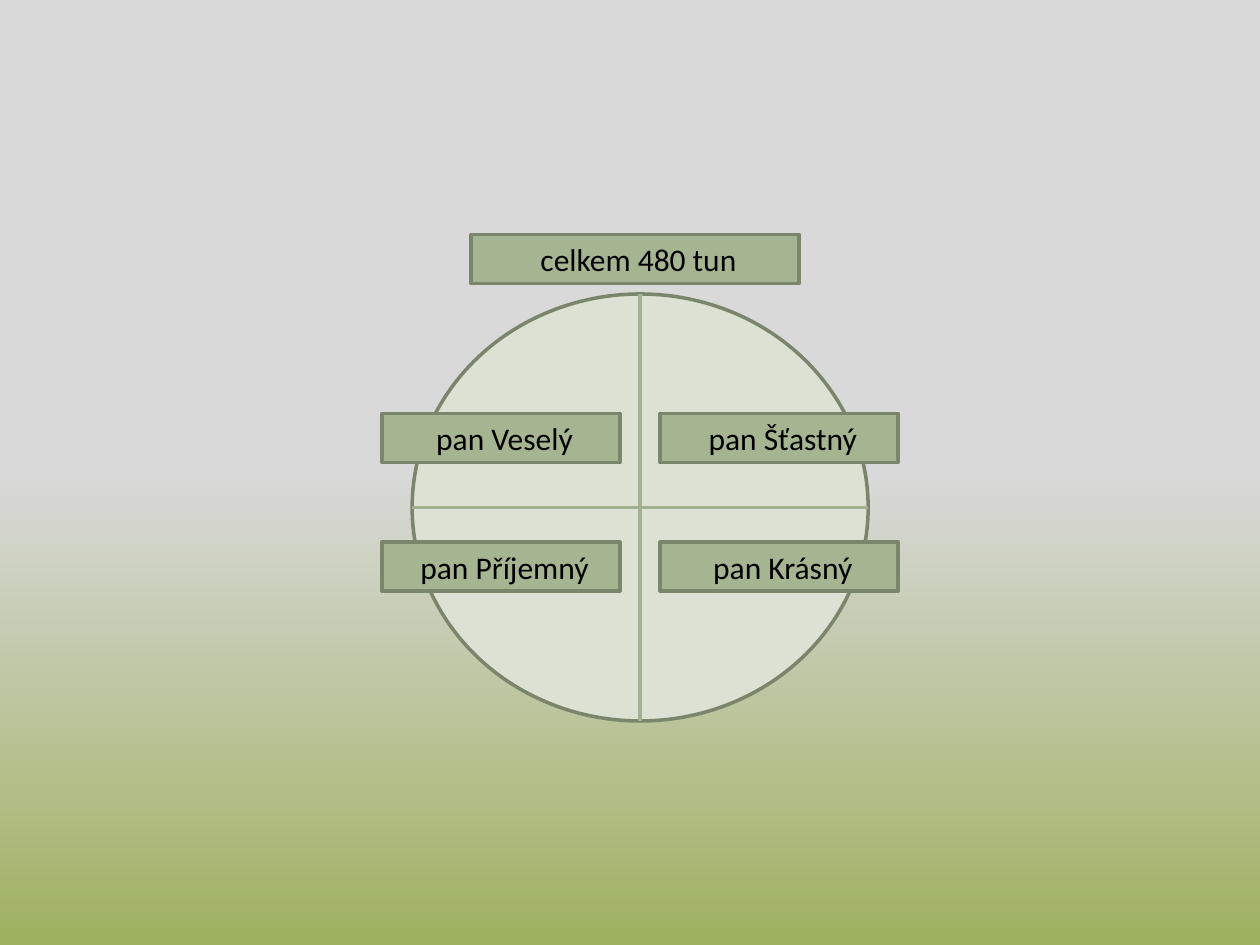
from dataclasses import dataclass

from pptx import Presentation
from pptx.dml.color import RGBColor
from pptx.enum import shapes as es, text as et
from pptx.oxml import ns, xmlchemy as xc
from pptx.util import Pt

BLACK = RGBColor(0x00, 0x00, 0x00)
GREY = RGBColor(0xD9, 0xD9, 0xD9)
OLIVE = RGBColor(0x9E, 0xB1, 0x60)
PALE = RGBColor(0xDB, 0xE1, 0xD3)
SAGE = RGBColor(0xA5, 0xB5, 0x92)
EDGE = RGBColor(0x7A, 0x86, 0x6C)
DIVIDER = RGBColor(0xA1, 0xB2, 0x8E)

CX, CY = 365.8, 290.0
PIE_W, PIE_H = 260.6, 244.0
LABEL_W, LABEL_H = 136.0, 28.1
COL_GAP = 23.0
ROW_TOPS = (236.2, 309.6)
NAMES = ((" pan Veselý", " pan Šťastný"), (" pan Příjemný", " pan Krásný"))
FONT = {"name": "Calibri", "size": Pt(18)}


@dataclass(frozen=True)
class Label:
    text: str
    x: float
    y: float
    w: float = LABEL_W


def add_background(s) -> None:
    fill = s.background.fill
    fill.gradient()
    fill.gradient_angle = 270
    for stop, (pos, color) in zip(fill.gradient_stops, ((0.5, GREY), (1, OLIVE))):
        stop.position = pos
        stop.color.rgb = color


def add_filled(s, kind, x: float, y: float, w: float, h: float, color: RGBColor):
    sp = s.shapes.add_shape(kind, Pt(x), Pt(y), Pt(w), Pt(h))
    sp.shadow.inherit = False
    sp.fill.solid()
    sp.fill.fore_color.rgb = color
    sp.line.color.rgb = EDGE
    sp.line.width = Pt(2)
    return sp


def add_divider(s, x1: float, y1: float, x2: float, y2: float) -> None:
    c = s.shapes.add_connector(
        es.MSO_CONNECTOR.STRAIGHT, Pt(x1), Pt(y1), Pt(x2), Pt(y2))
    c.line.color.rgb = DIVIDER
    c.line.width = Pt(2.25)
    c._element.spPr.append(xc.OxmlElement("a:effectLst", ns.nsdecls("a") and None))


def add_label(s, label: Label) -> None:
    sp = add_filled(s, es.MSO_SHAPE.RECTANGLE, label.x, label.y, label.w, LABEL_H, SAGE)
    tf = sp.text_frame
    tf.word_wrap = True
    tf.vertical_anchor = et.MSO_ANCHOR.MIDDLE
    p = tf.paragraphs[0]
    p.alignment = et.PP_ALIGN.CENTER
    r = p.add_run()
    r.text = label.text
    for key, value in FONT.items():
        setattr(r.font, key, value)
    r.font.color.rgb = BLACK


def main() -> None:
    prs = Presentation()
    prs.slide_width, prs.slide_height = Pt(720), Pt(540)
    s = prs.slides.add_slide(prs.slide_layouts[6])
    add_background(s)

    left, top = CX - PIE_W / 2, CY - PIE_H / 2
    add_filled(s, es.MSO_SHAPE.OVAL, left, top, PIE_W, PIE_H, PALE)
    add_divider(s, CX, top, CX, top + PIE_H)
    add_divider(s, left, CY, left + PIE_W, CY)

    columns = (CX - COL_GAP / 2 - LABEL_W, CX + COL_GAP / 2)
    labels = [Label(name, x, y)
              for y, row in zip(ROW_TOPS, NAMES)
              for x, name in zip(columns, row)]
    labels.append(Label(" celkem 480 tun", 269.3, 133.9, 187.2))
    for label in labels:
        add_label(s, label)

    prs.save("out.pptx")


if __name__ == "__main__":
    main()
